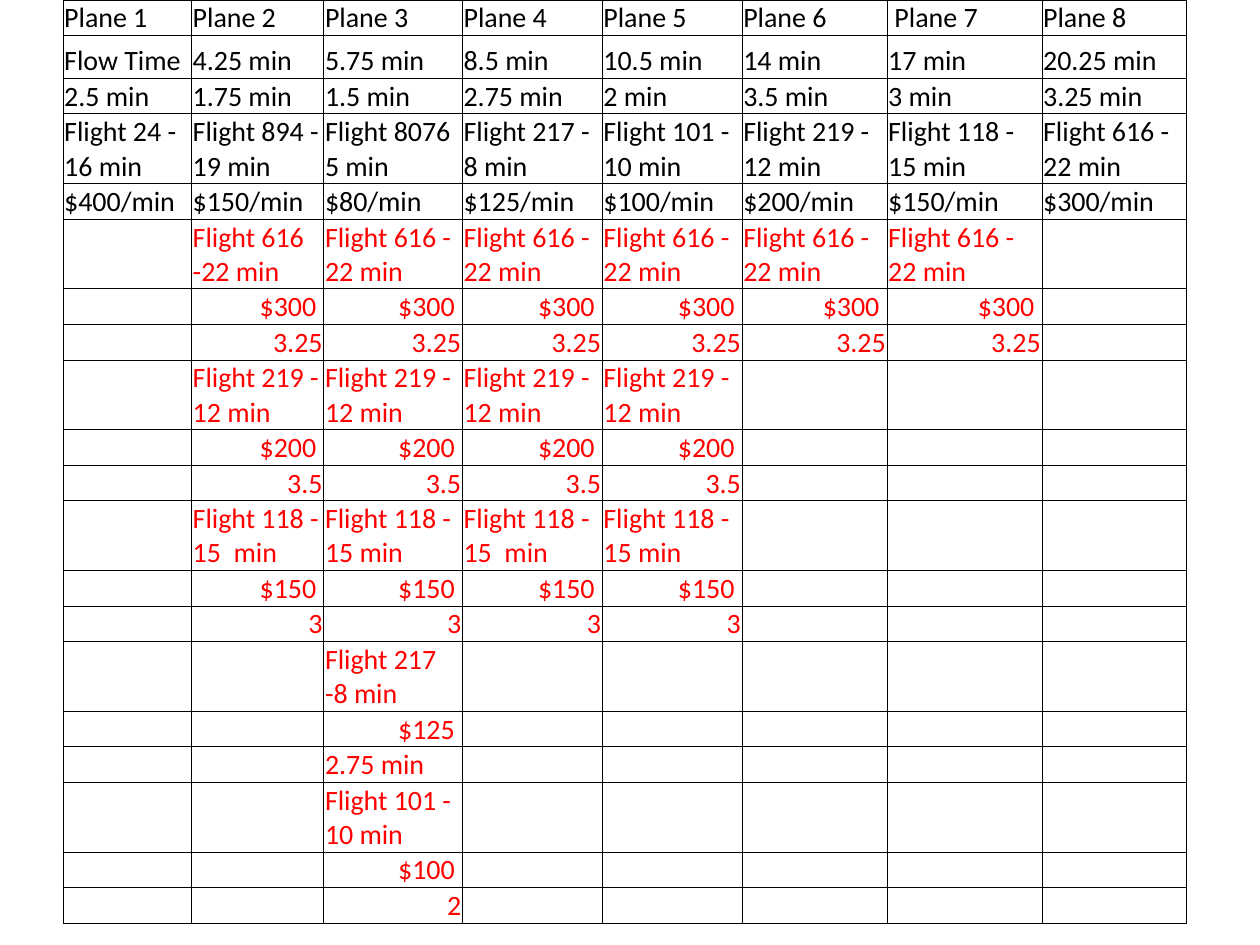
import dataclasses

import lxml.etree
import pptx
import pptx.dml.color
import pptx.enum.text
import pptx.oxml.ns
import pptx.util
from pptx.util import Inches


@dataclasses.dataclass(frozen=True)
class Theme:
    font: str = "Calibri"
    size: int = 16
    border_width: float = 0.5
    text: str = "000000"
    swap: str = "FF0000"
    border: str = "000000"
    cell: str = "FFFFFF"


THEME = Theme()
COLUMN_WIDTHS = [1.02, 1.05, 1.1, 1.11, 1.11, 1.15, 1.23, 1.15]
SCHEDULE_HEIGHTS = [0.25, 0.34, 0.25, 0.51, 0.25]
SWAP_HEIGHTS = [0.48, 0.25, 0.25]

SCHEDULE = [
    ["Plane 1", "Plane 2", "Plane 3", "Plane 4",
     "Plane 5", "Plane 6", " Plane 7", "Plane 8"],
    ["Flow Time", "4.25 min", "5.75 min", "8.5 min",
     "10.5 min", "14 min", "17 min", "20.25 min"],
    ["2.5 min", "1.75 min", "1.5 min", "2.75 min",
     "2 min", "3.5 min", "3 min", "3.25 min"],
    ["Flight 24 - 16 min", "Flight 894 - 19 min", "Flight 8076  5 min",
     "Flight 217 - 8 min", "Flight 101 - 10 min", "Flight 219 - 12 min",
     "Flight 118 - 15 min", "Flight 616 - 22 min"],
    ["$400/min", "$150/min", "$80/min", "$125/min",
     "$100/min", "$200/min", "$150/min", "$300/min"],
]

SWAPS = [
    (1, ["Flight 616 -22 min"] + ["Flight 616 - 22 min"] * 5, "$300 ", "3.25"),
    (1, ["Flight 219 - 12 min"] * 4, "$200 ", "3.5"),
    (1, ["Flight 118 - 15  min", "Flight 118 - 15 min"] * 2, "$150 ", "3"),
    (2, ["Flight 217 -8 min"], "$125 ", "2.75 min"),
    (2, ["Flight 101 - 10 min"], "$100 ", "2"),
]


def swap_rows():
    rows = []
    for start, flights, cost, time in SWAPS:
        count = len(flights)
        for texts in (flights, [cost] * count, [time] * count):
            padding = len(COLUMN_WIDTHS) - start - count
            rows.append([""] * start + texts + [""] * padding)
    return rows


def set_borders(cell):
    properties = cell._tc.get_or_add_tcPr()
    qn = pptx.oxml.ns.qn
    for position, side in enumerate(("a:lnL", "a:lnR", "a:lnT", "a:lnB")):
        line = lxml.etree.Element(qn(side))
        line.set("w", str(int(pptx.util.Pt(THEME.border_width))))
        fill = lxml.etree.SubElement(line, qn("a:solidFill"))
        lxml.etree.SubElement(fill, qn("a:srgbClr")).set("val", THEME.border)
        properties.insert(position, line)


def style_cell(cell):
    cell.fill.solid()
    cell.fill.fore_color.rgb = pptx.dml.color.RGBColor.from_string(THEME.cell)
    cell.margin_left = cell.margin_right = cell.margin_top = Inches(0.01)
    cell.margin_bottom = Inches(0)
    cell.vertical_anchor = pptx.enum.text.MSO_ANCHOR.BOTTOM
    set_borders(cell)


def write_cell(cell, text, color):
    paragraph = cell.text_frame.paragraphs[0]
    if not text:
        ending = lxml.etree.SubElement(
            paragraph._p, pptx.oxml.ns.qn("a:endParaRPr"))
        ending.set("sz", str(THEME.size * 100))
        return
    align = pptx.enum.text.PP_ALIGN
    is_swap_value = color == THEME.swap and not text.endswith("min")
    paragraph.alignment = align.RIGHT if is_swap_value else align.LEFT
    run = paragraph.add_run()
    run.text = text
    run.font.name = THEME.font
    run.font.size = pptx.util.Pt(THEME.size)
    run.font.color.rgb = pptx.dml.color.RGBColor.from_string(color)


def add_flight_table(slide):
    rows = SCHEDULE + swap_rows()
    heights = SCHEDULE_HEIGHTS + SWAP_HEIGHTS * len(SWAPS)
    table = slide.shapes.add_table(
        len(rows), len(COLUMN_WIDTHS), Inches(0.5), Inches(0),
        Inches(sum(COLUMN_WIDTHS)), Inches(sum(heights))).table
    table.first_row = False
    table.horz_banding = False
    for column, width in zip(table.columns, COLUMN_WIDTHS):
        column.width = Inches(width)
    for index, (row, height, texts) in enumerate(zip(table.rows, heights, rows)):
        row.height = Inches(height)
        color = THEME.text if index < len(SCHEDULE) else THEME.swap
        for cell, text in zip(row.cells, texts):
            style_cell(cell)
            write_cell(cell, text, color)


def main():
    presentation = pptx.Presentation()
    presentation.slide_width = Inches(10)
    presentation.slide_height = Inches(7.5)
    slide = presentation.slides.add_slide(presentation.slide_layouts[6])
    add_flight_table(slide)
    presentation.save("out.pptx")


if __name__ == "__main__":
    main()
